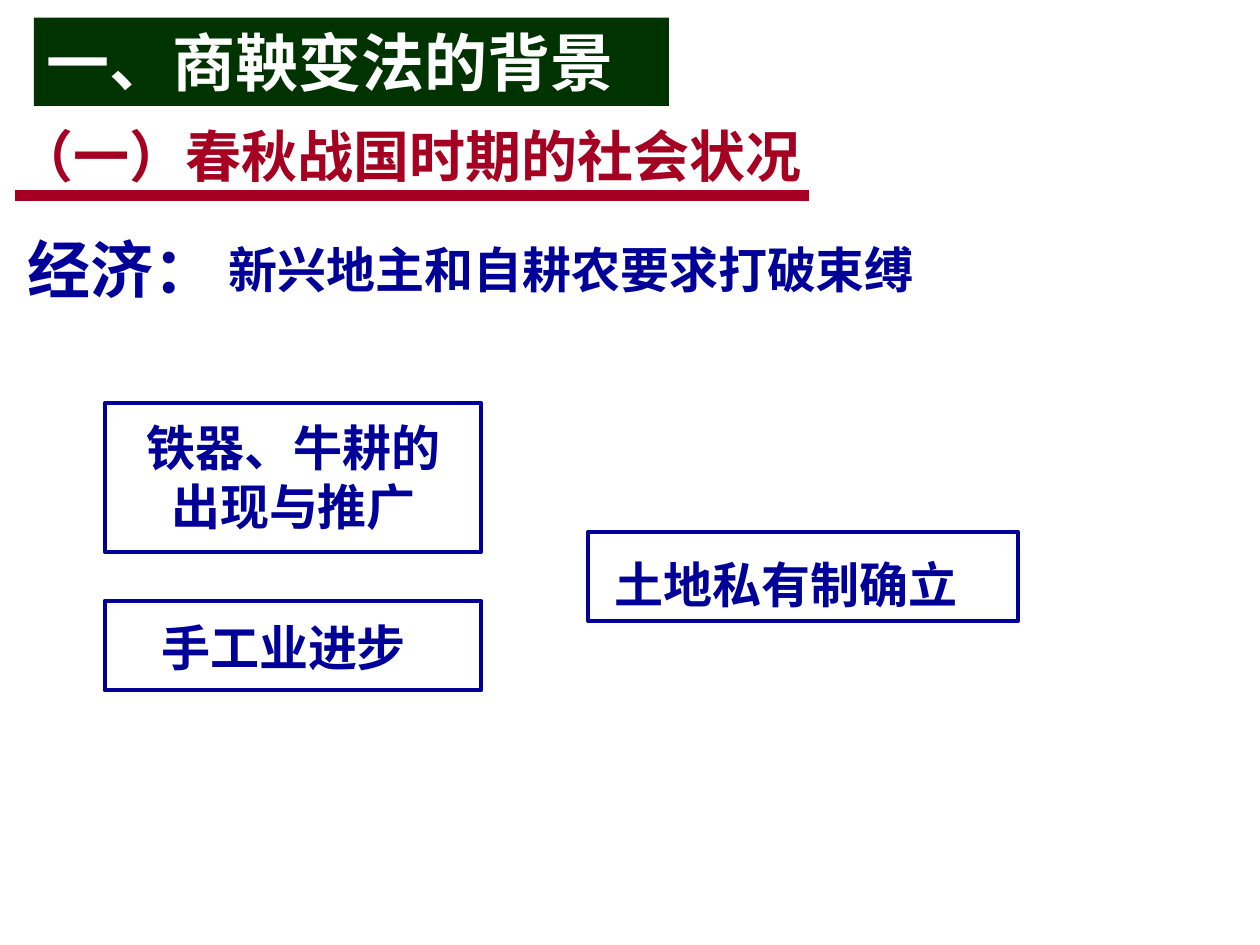
"""Build the slide on the background of Shang Yang's reforms."""
from dataclasses import dataclass

from lxml.etree import SubElement
from pptx import Presentation
from pptx.dml.color import RGBColor
from pptx.enum.shapes import MSO_CONNECTOR, MSO_SHAPE
from pptx.enum.text import MSO_ANCHOR, MSO_AUTO_SIZE, PP_ALIGN
from pptx.oxml.ns import qn
from pptx.util import Pt

COLORS = {"navy": "000099", "red": "A50021", "green": "003300", "white": "FFFFFF"}
CJK = "Noto Sans CJK SC"


@dataclass
class Box:
    left: float
    top: float
    width: float
    height: float

    def lengths(self) -> tuple:
        return tuple(Pt(v) for v in (self.left, self.top, self.width, self.height))


@dataclass
class Label:
    box: Box
    text: str
    fmt: dict


FRAMES = [
    Box(59.8, 230.4, 215.3, 85),
    Box(59.8, 343.4, 215.3, 51.1),
    Box(336.2, 303.8, 245.5, 51.1),
]
LABELS = [
    Label(Box(2.9, 65.5, 538.6, 46.1), "（一）春秋战国时期的社会状况",
          dict(size=32, font=CJK, color="red")),
    Label(Box(8.6, 128.2, 244.1, 50.4), "经济：", dict(size=36, font=CJK)),
    Label(Box(122.4, 133.2, 408.2, 41), "新兴地主和自耕农要求打破束缚",
          dict(align=PP_ALIGN.CENTER, wrap=False)),
    Label(Box(65.5, 234.7, 204.5, 74.9), "铁器、牛耕的\n出现与推广",
          dict(align=PP_ALIGN.CENTER)),
    Label(Box(59.8, 349.2, 204.5, 41), "手工业进步", dict(align=PP_ALIGN.CENTER)),
    Label(Box(344.2, 303.1, 211.7, 51.1), "土地私有制确立",
          dict(spacing=1.3, wrap=False)),
]


def rgb(name: str) -> RGBColor:
    return RGBColor.from_string(COLORS[name])


def write(sp, text: str, *, size: float = 28, font: str = "Arial", color: str = "navy",
          align=PP_ALIGN.LEFT, spacing: float = 1.0, wrap: bool = True) -> None:
    tf = sp.text_frame
    tf.text = text
    tf.word_wrap = wrap
    tf.auto_size = MSO_AUTO_SIZE.NONE
    tf.vertical_anchor = MSO_ANCHOR.MIDDLE
    for p in tf.paragraphs:
        p.alignment = align
        p.line_spacing = spacing
        p.space_before = Pt(0)
        for r in p.runs:
            r.font.size, r.font.bold, r.font.name = Pt(size), True, font
            r.font.color.rgb = rgb(color)
            SubElement(r.font._element, qn("a:ea")).set("typeface", CJK)


def add_title(s, box: Box, text: str) -> None:
    sp = s.shapes.title
    sp.left, sp.top, sp.width, sp.height = box.lengths()
    sp.fill.solid()
    sp.fill.fore_color.rgb = rgb("green")
    write(sp, text, size=36, color="white")


def add_rule(s, x1: float, x2: float, y: float) -> None:
    line = s.shapes.add_connector(MSO_CONNECTOR.STRAIGHT, Pt(x1), Pt(y), Pt(x2), Pt(y))
    line.line.color.rgb = rgb("red")
    line.line.width = Pt(6)
    SubElement(line._element.spPr, qn("a:effectLst"))


def add_frame(s, box: Box) -> None:
    sp = s.shapes.add_shape(MSO_SHAPE.RECTANGLE, *box.lengths())
    sp.shadow.inherit = False
    sp.fill.background()
    sp.line.color.rgb = rgb("navy")
    sp.line.width = Pt(2.25)


def add_label(s, label: Label) -> None:
    write(s.shapes.add_textbox(*label.box.lengths()), label.text, **label.fmt)


def main() -> None:
    prs = Presentation()
    prs.slide_width, prs.slide_height = Pt(720), Pt(540)
    s = prs.slides.add_slide(prs.slide_layouts[5])
    add_title(s, Box(19.4, 10.1, 362.9, 50.4), "一、商鞅变法的背景")
    add_rule(s, 8.6, 462.2, 111.6)
    for box in FRAMES:
        add_frame(s, box)
    for label in LABELS:
        add_label(s, label)
    prs.save("out.pptx")


if __name__ == "__main__":
    main()
